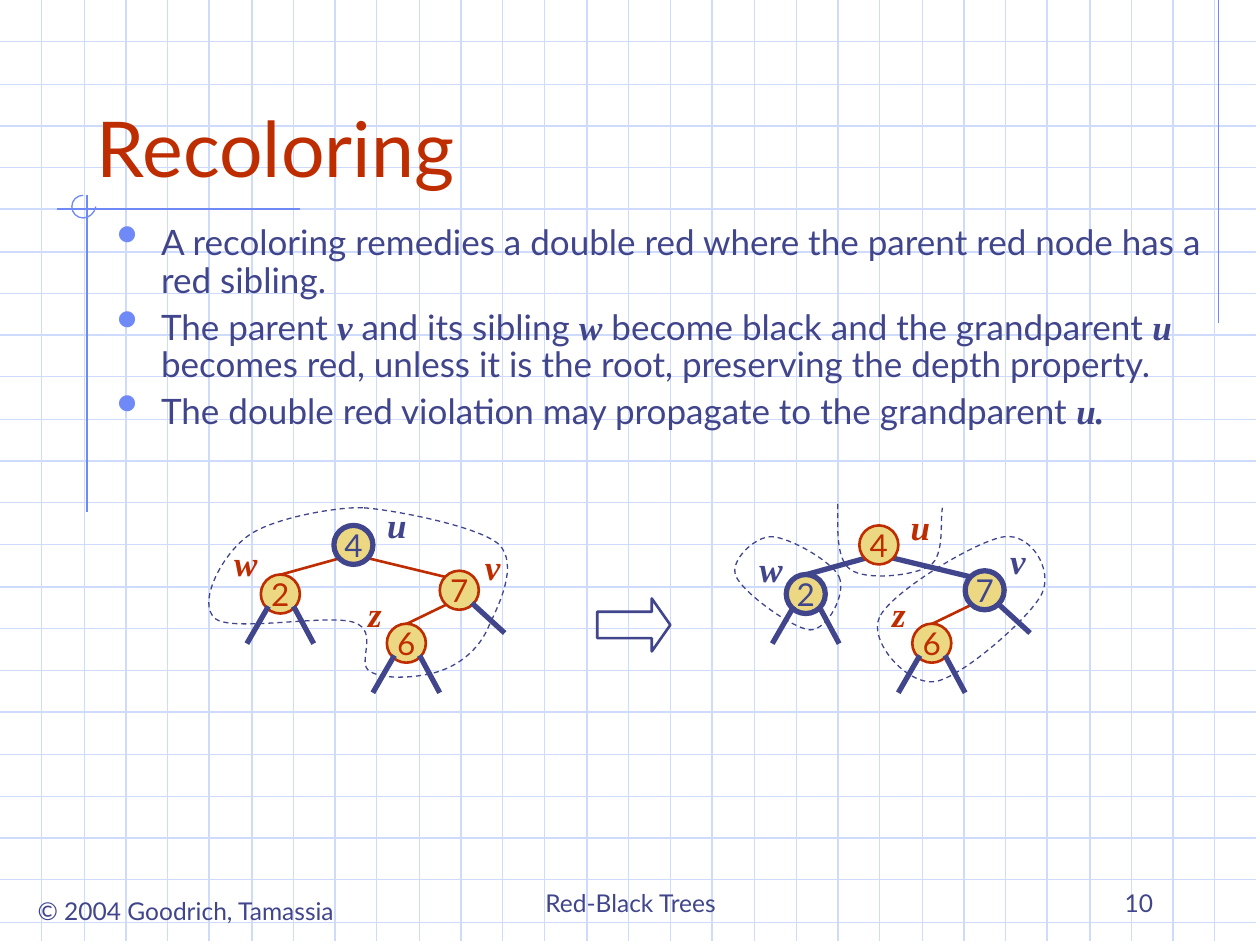
from lxml.etree import SubElement
from pptx import Presentation
from pptx.dml.color import RGBColor
from pptx.enum.dml import MSO_LINE
from pptx.enum.shapes import MSO_CONNECTOR, MSO_SHAPE
from pptx.enum.text import MSO_ANCHOR as ANCHOR, MSO_AUTO_SIZE as FIT, PP_ALIGN as ALIGN
from pptx.oxml.ns import qn
from pptx.util import Pt

PX = 9144
WIDTH, HEIGHT = 1000, 750
GRID = RGBColor(0xCF, 0xDB, 0xFD)
ACCENT = RGBColor(0x6F, 0x89, 0xF7)
INK = RGBColor(0x40, 0x45, 0x8C)
RED = RGBColor(0xBE, 0x2D, 0x00)
GOLD = RGBColor(0xEC, 0xD8, 0x82)
SANS, SERIF = "Lato", "Times New Roman"

NODE = 31
NODES = {"4": (109, 15), "6": (151, 93), "7": (193, 51), "2": (51, 54)}
EDGES = {"7": (136, 41, 198, 56), "6": (198, 78, 167, 93), "2": (114, 41, 67, 54)}
STUBS = [(178, 120, 192, 146), (156, 120, 141, 146), (220, 78, 243, 99),
         (78, 81, 92, 107), (56, 81, 41, 107)]
LABELS = {"u": "4", "w": "2", "v": "7", "z": "6"}

BEFORE = [
    [(132, 1), (113, 0), (59, 9), (40, 24), (20, 39), (0, 77), (15, 89),
     (29, 100), (105, 85), (125, 92), (146, 99), (126, 125), (138, 131),
     (149, 138), (179, 136), (195, 130), (211, 124), (225, 112), (232, 95),
     (240, 78), (256, 46), (240, 30), (223, 15), (152, 2), (132, 1)],
]
AFTER = [
    [(125, 88), (116, 107), (147, 142), (169, 139), (190, 136), (245, 88), (254, 69),
     (263, 50), (245, 21), (224, 24), (202, 27), (134, 68), (125, 88)],
    [(92, -2), (92, 14), (90, 42), (102, 50), (114, 59), (153, 55), (165, 47),
     (177, 39), (173, 11), (175, 1)],
    [(93, 56), (99, 69), (84, 98), (70, 98), (56, 97), (16, 68), (11, 55),
     (6, 43), (26, 24), (39, 24), (53, 24), (88, 44), (93, 56)],
]
RING = [(9, 0), (4, 0), (0, 4), (0, 9), (0, 14), (4, 18), (9, 18), (14, 18), (18, 14), (19, 9)]
BULLETS = [
    [("A recoloring remedies a double red where the parent red node has a red sibling.", False)],
    [("The parent ", False), ("v", True), (" and its sibling ", False), ("w", True),
     (" become black and the grandparent ", False), ("u", True),
     (" becomes red, unless it is the root, preserving the depth property.", False)],
    [("The double red violation may propagate to the grandparent ", False), ("u.", True)],
]


def px(*values):
    """Turn px lengths into EMU."""
    return [round(value * PX) for value in values]


def add_line(shapes, x1, y1, x2, y2, color, weight=0.75):
    """Draw a straight line without a shadow, square-ended when heavy."""
    line = shapes.add_connector(MSO_CONNECTOR.STRAIGHT, *px(x1, y1, x2, y2))
    line.line.color.rgb = color
    line.line.width = Pt(weight)
    spPr = line._element.spPr
    if weight > 1:
        spPr.find(qn("a:ln")).set("cap", "sq")
    SubElement(spPr, qn("a:effectLst"))


def style_outline(sp, color, weight):
    """Leave a shape unfilled, unshadowed and outlined."""
    sp.shadow.inherit = False
    sp.fill.background()
    sp.line.color.rgb = color
    sp.line.width = Pt(weight)


def add_curve(shapes, left, top, knots, color, dashed=False):
    """Draw a chain of cubic Bezier segments."""
    points = [px(left + x, top + y) for x, y in knots]
    builder = shapes.build_freeform(*points[0])
    builder.add_line_segments(points[1:], close=knots[0] == knots[-1])
    sp = builder.convert_to_shape()
    segments = list(sp._element.iter(qn("a:lnTo")))
    for i in range(0, len(knots) - 1, 3):
        first, second, third = segments[i:i + 3]
        first.tag = qn("a:cubicBezTo")
        for extra in (second, third):
            first.append(extra[0])
            extra.getparent().remove(extra)
    style_outline(sp, color, 0.75)
    if dashed:
        sp.line.dash_style = MSO_LINE.DASH


def add_run(p, text, size, color, math=False):
    """Add one run, in bold italic serif for variables."""
    r = p.add_run()
    r.text = text
    r.font.name = SERIF if math else SANS
    r.font.size = Pt(size)
    r.font.color.rgb = color
    r.font.bold = r.font.italic = math


def add_text(slide, left, top, width, height, text, size, color,
             align=ALIGN.CENTER, anchor=ANCHOR.TOP, math=False, wrap=True):
    """Place one line of text in a box."""
    tf = slide.shapes.add_textbox(*px(left, top, width, height)).text_frame
    tf.word_wrap = wrap
    tf.vertical_anchor = anchor
    if math or not wrap:
        tf.auto_size = FIT.SHAPE_TO_FIT_TEXT
    p = tf.paragraphs[0]
    p.alignment = align
    add_run(p, text, size, color, math)


def add_backdrop(slide, width, height):
    """Draw the graph paper and the accent rules as one group."""
    shapes = slide.shapes.add_group_shape().shapes
    steps = [(i * 133 + 2) // 4 for i in range(1, 30)]
    for y in steps[:22]:
        add_line(shapes, 0, y, width, y, GRID)
    for x in steps:
        add_line(shapes, x, 0, x, height, GRID)
    for rule in [(967, 0, 967, 256), (238, 166, 45, 166), (69, 155, 69, 406)]:
        add_line(shapes, *rule, ACCENT)
    add_curve(shapes, 57, 155, RING, ACCENT)


def add_footer(slide, top):
    """Place the copyright, the chapter name and the page number."""
    add_text(slide, 18, top + 23, 259, 34, "© 2004 Goodrich, Tamassia", 14, INK, wrap=False)
    add_text(slide, 342, top, 317, 50, "Red-Black Trees", 14, INK, anchor=ANCHOR.BOTTOM)
    add_text(slide, 717, top, 208, 50, "10", 14, INK, ALIGN.RIGHT, ANCHOR.BOTTOM)


def add_bullets(slide, left, top, width, height):
    """Fill the body box with bulleted paragraphs."""
    tf = slide.shapes.add_textbox(*px(left, top, width, height)).text_frame
    tf.word_wrap = True
    for i, runs in enumerate(BULLETS):
        p = tf.add_paragraph() if i else tf.paragraphs[0]
        p.line_spacing = 0.9
        p.space_before = Pt(5 if i else 0)
        pPr = p._p.get_or_add_pPr()
        pPr.set("marL", str(35 * PX))
        pPr.set("indent", str(-35 * PX))
        SubElement(SubElement(pPr, qn("a:buClr")), qn("a:srgbClr"), val=str(ACCENT))
        SubElement(pPr, qn("a:buSzPct"), val="176000")
        SubElement(pPr, qn("a:buChar"), char="•")
        for text, math in runs:
            add_run(p, text, 20, INK, math)


def add_tree(slide, left, top, black, regions, labels):
    """Draw a tree whose black nodes have thick dark outlines and edges."""
    pens = {key: (INK, 3) if key in black else (RED, 1.5) for key in NODES}
    for key, (x1, y1, x2, y2) in EDGES.items():
        add_line(slide.shapes, left + x1, top + y1, left + x2, top + y2, *pens[key])
    for key, (x, y) in NODES.items():
        sp = slide.shapes.add_shape(MSO_SHAPE.OVAL, *px(left + x, top + y, NODE, NODE))
        style_outline(sp, *pens[key])
        sp.fill.solid()
        sp.fill.fore_color.rgb = GOLD
        tf = sp.text_frame
        tf.word_wrap = False
        tf.vertical_anchor = ANCHOR.MIDDLE
        tf.paragraphs[0].alignment = ALIGN.CENTER
        add_run(tf.paragraphs[0], key, 18, pens[key][0])
    for x1, y1, x2, y2 in STUBS:
        add_line(slide.shapes, left + x1, top + y1, left + x2, top + y2, INK, 3)
    for knots in regions:
        add_curve(slide.shapes, left, top, knots, INK, dashed=True)
    for name, (x, y, width) in labels.items():
        add_text(slide, left + x, top + y, width, 44, name, 20, pens[LABELS[name]][0], math=True)


def add_arrow(slide, left, top, width, height):
    """Draw the hollow arrow between the trees."""
    sp = slide.shapes.add_shape(MSO_SHAPE.RIGHT_ARROW, *px(left, top, width, height))
    sp.adjustments[0], sp.adjustments[1] = 0.5, 0.35
    style_outline(sp, INK, 1.5)


def main():
    """Build and save the slide."""
    prs = Presentation()
    prs.slide_width, prs.slide_height = px(WIDTH, HEIGHT)
    slide = prs.slides.add_slide(prs.slide_layouts[6])
    add_backdrop(slide, 997, 747)
    add_footer(slide, 683)
    add_text(slide, 67, 33, 850, 125, "Recoloring", 44, RED, ALIGN.LEFT, ANCHOR.BOTTOM)
    add_bullets(slide, 83, 174, 883, 217)
    add_tree(slide, 156, 402, "4", BEFORE,
             {"u": (138, -7, 42), "w": (18, 23, 42), "z": (123, 63, 37), "v": (218, 26, 34)})
    add_arrow(slide, 474, 475, 58, 42)
    add_tree(slide, 573, 402, "27", AFTER,
             {"u": (140, -6, 34), "w": (18, 28, 42), "z": (122, 63, 37), "v": (218, 21, 34)})
    prs.save("out.pptx")


if __name__ == "__main__":
    main()
